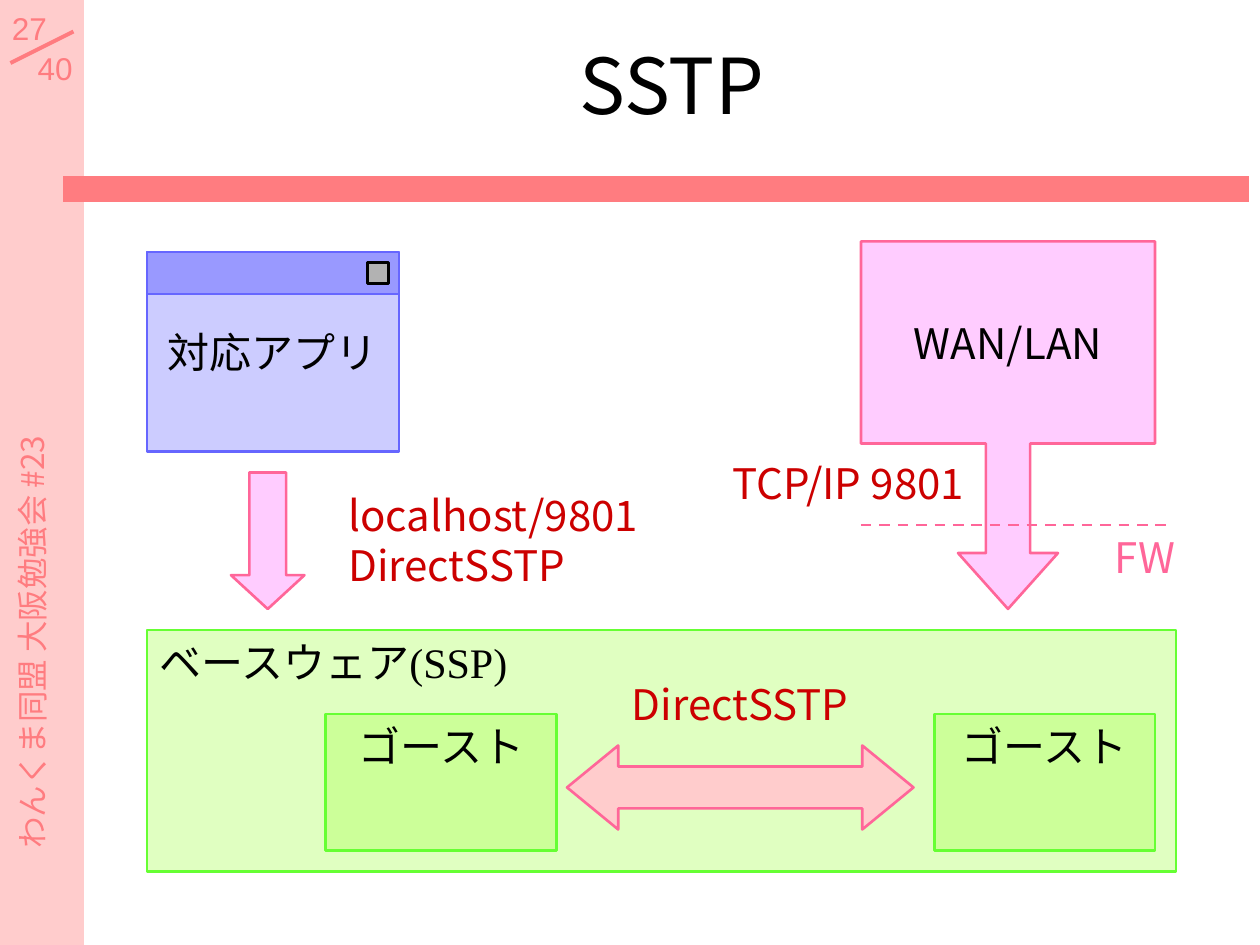
from lxml.etree import SubElement
from pptx import Presentation
from pptx.dml.color import RGBColor
from pptx.enum.dml import MSO_LINE_DASH_STYLE as Dash
from pptx.enum.shapes import MSO_CONNECTOR as Connector, MSO_SHAPE as Shape
from pptx.enum.text import MSO_ANCHOR as Anchor, MSO_AUTO_SIZE as AutoSize, PP_ALIGN as Align
from pptx.oxml.ns import qn
from pptx.util import Pt

COLORS = {
    "black": "000000", "coral": "FF7C80", "blush": "FFCCCC", "red": "CC0000",
    "pink": "FF6699", "orchid": "FFCCFF", "blue": "6666FF", "title_bar": "9999FF",
    "window": "CCCCFF", "gray": "B2B2B2", "green": "66FF33", "base": "E0FFC1",
    "ghost": "CCFF99",
}
SANS, SERIF = "Noto Sans CJK JP", "Times New Roman"
LEFT, CENTER, RIGHT = Align.LEFT, Align.CENTER, Align.RIGHT
TOP, MIDDLE = Anchor.TOP, Anchor.MIDDLE

SIDEBAR = (Shape.RECTANGLE, (0, 0, 48, 540), "blush", None, ())
SHAPES = [
    (Shape.RECTANGLE, (84, 360, 588, 138), "base", "green", ()),
    (Shape.RECTANGLE, (186, 408, 132, 78), "ghost", "green", ()),
    (Shape.RECTANGLE, (534, 408, 126, 78), "ghost", "green", ()),
    (Shape.LEFT_RIGHT_ARROW, (324, 426, 198, 48), "blush", "pink", (0.5, 0.61)),
    (Shape.RECTANGLE, (84, 144, 144, 114), "window", "blue", ()),
    (Shape.RECTANGLE, (84, 144, 144, 24), "title_bar", "blue", ()),
    (Shape.RECTANGLE, (210, 150, 12, 12), "gray", "black", ()),
    (Shape.DOWN_ARROW, (132, 270, 42, 78), "orchid", "pink", (0.5, 0.46)),
    (Shape.DOWN_ARROW_CALLOUT, (492, 138, 168, 210), "orchid", "pink", (0.15, 0.17, 0.19, 0.55)),
]
SHAPE_TEXTS = {
    0: ("ベースウェア(SSP)", SERIF, LEFT, TOP),
    1: ("ゴースト", SERIF, CENTER, TOP),
    2: ("ゴースト", SERIF, CENTER, TOP),
    4: ("対応アプリ", SERIF, CENTER, MIDDLE),
    8: ("WAN/LAN", SANS, CENTER, MIDDLE),
}
LINES = [
    ((36, 108), (714, 108), "coral", 15, None),
    ((6, 36), (42, 18), "coral", 2.25, None),
    ((492, 300), (666, 300), "pink", 1.5, Dash.DASH),
]
LABELS = [
    ("27", (-7.2, 1.5, 48, 29), 18, "Arial", "coral", CENTER, 0),
    ("40", (13.5, 24.5, 36, 29), 18, "Arial", "coral", CENTER, 0),
    ("わんくま同盟 大阪勉強会 #23", (-155, 297, 354, 36), 18, SANS, "coral", LEFT, 270),
    ("localhost/9801\nDirectSSTP", (192, 276, 198, 65), 24, SANS, "red", LEFT, 0),
    ("DirectSSTP", (354, 384, 162, 36), 24, SANS, "red", LEFT, 0),
    ("TCP/IP 9801", (378, 258, 180, 36), 24, SANS, "red", RIGHT, 0),
    ("FW", (630, 300, 60, 36), 24, SANS, "pink", LEFT, 0),
]


def color(name):
    return RGBColor.from_string(COLORS[name])


def points(values):
    return [Pt(value) for value in values]


def set_attributes(target, values):
    for name, value in values.items():
        setattr(target, name, value)


def write(shape, text, size, font, tint, align, anchor=TOP, wrap=True):
    frame = shape.text_frame
    set_attributes(frame, {
        "auto_size": AutoSize.NONE, "word_wrap": wrap, "vertical_anchor": anchor,
        "margin_left": Pt(7.2), "margin_right": Pt(7.2),
        "margin_top": Pt(3.6), "margin_bottom": Pt(3.6),
    })
    paragraph = frame.paragraphs[0]
    set_attributes(paragraph, {"text": text, "alignment": align})
    for run in paragraph.runs:
        set_attributes(run.font, {"size": Pt(size), "name": font})
        run.font.color.rgb = color(tint)
        SubElement(run.font._element, qn("a:ea"), typeface=SANS)


def add_shape(slide, kind, box, fill, outline, adjustments):
    shape = slide.shapes.add_shape(kind, *points(box))
    shape.shadow.inherit = False
    shape.fill.solid()
    shape.fill.fore_color.rgb = color(fill)
    if outline:
        shape.line.color.rgb = color(outline)
        shape.line.width = Pt(1.5)
    else:
        shape.line.fill.background()
    for index, value in enumerate(adjustments):
        shape.adjustments[index] = value
    return shape


def add_line(slide, start, end, tint, width, dash):
    line = slide.shapes.add_connector(Connector.STRAIGHT, *points(start + end))
    line.line.color.rgb = color(tint)
    set_attributes(line.line, {"width": Pt(width), "dash_style": dash})
    SubElement(line._element.spPr, qn("a:effectLst"))


def main():
    presentation = Presentation()
    set_attributes(presentation, {"slide_width": Pt(720), "slide_height": Pt(540)})
    slide = presentation.slides.add_slide(presentation.slide_layouts[5])

    title = slide.shapes.title
    set_attributes(title, dict(zip(("left", "top", "width", "height"), points((60, 25, 648, 46)))))
    write(title, "SSTP", 44, SANS, "black", CENTER, MIDDLE)

    add_shape(slide, *SIDEBAR)
    for index, details in enumerate(SHAPES):
        shape = add_shape(slide, *details)
        if index in SHAPE_TEXTS:
            text, font, align, anchor = SHAPE_TEXTS[index]
            write(shape, text, 24, font, "black", align, anchor, wrap=False)
    for details in LINES:
        add_line(slide, *details)
    for text, box, size, font, tint, align, rotation in LABELS:
        label = slide.shapes.add_textbox(*points(box))
        label.rotation = rotation
        write(label, text, size, font, tint, align)
    presentation.save("out.pptx")


if __name__ == "__main__":
    main()
